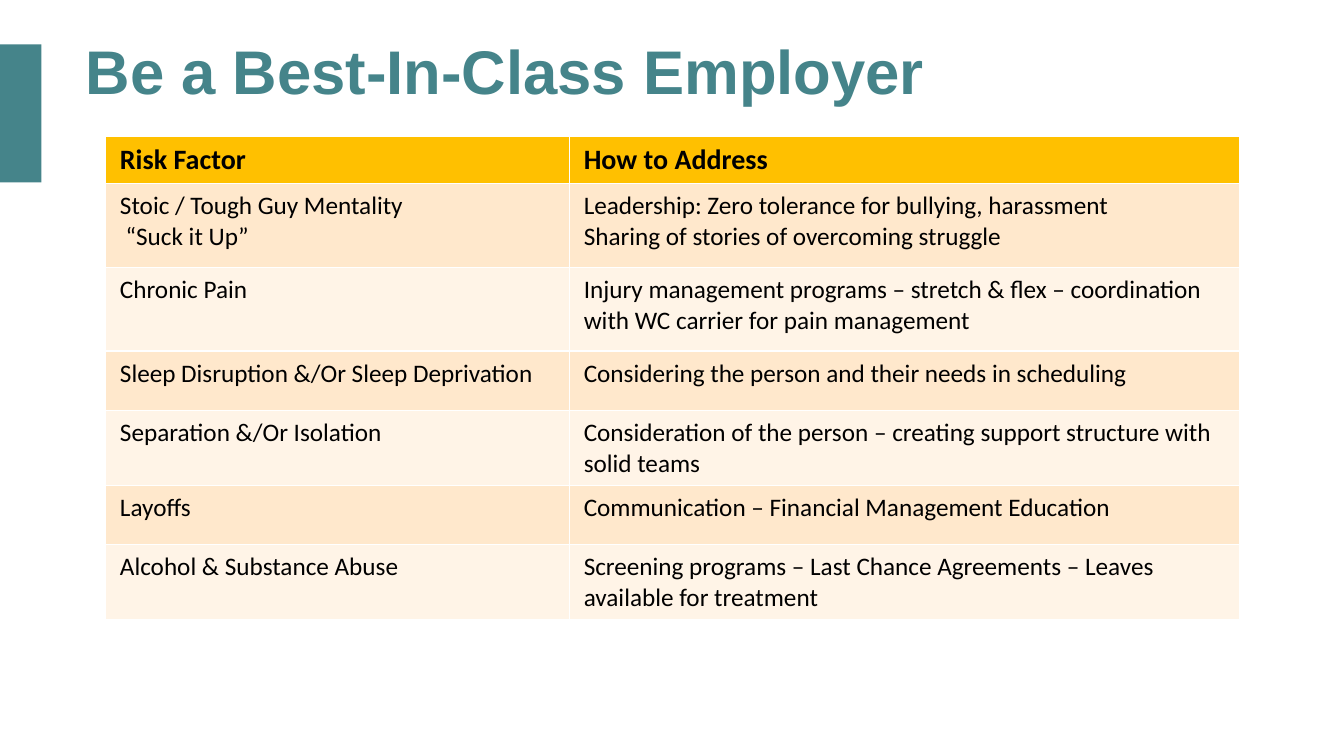
import pptx
import pptx.util
import pptx.dml.color
import pptx.enum.shapes
import pptx.enum.text

RGB = pptx.dml.color.RGBColor
Inches = pptx.util.Inches
Pt = pptx.util.Pt

TEAL = RGB(0x45, 0x84, 0x8A)
GOLD = RGB(0xFF, 0xC0, 0x00)
PEACH = RGB(0xFF, 0xE8, 0xCC)
CREAM = RGB(0xFF, 0xF4, 0xE7)
BLACK = RGB(0, 0, 0)

TITLE = {"name": "Arial", "size": Pt(44), "bold": True}
HEAD = {"name": "Calibri", "size": Pt(20), "bold": True}
BODY = {"name": "Calibri", "size": Pt(18), "bold": False}
INSET = {"margin_left": Inches(0.14), "margin_top": Inches(0.07),
         "margin_right": Inches(0.07), "margin_bottom": Inches(0.07)}

COLS = [4.6, 6.64]
# Each row: height, risk factor, how to address
ROWS = [
    (0.47, "Risk Factor", "How to Address"),
    (0.83, "Stoic / Tough Guy Mentality\n “Suck it Up”",
     "Leadership: Zero tolerance for bullying, harassment\n"
     "Sharing of stories of overcoming struggle"),
    (0.83, "Chronic Pain",
     "Injury management programs – stretch & flex – "
     "coordination with WC carrier for pain management"),
    (0.59, "Sleep Disruption &/Or Sleep Deprivation",
     "Considering the person and their needs in scheduling"),
    (0.74, "Separation &/Or Isolation",
     "Consideration of the person – creating support structure "
     "with solid teams"),
    (0.59, "Layoffs", "Communication – Financial Management Education"),
    (0.74, "Alcohol & Substance Abuse",
     "Screening programs – Last Chance Agreements – "
     "Leaves available for treatment"),
]


def style(frame, form, color):
    for para in frame.paragraphs:
        for run in para.runs:
            for key, val in form.items():
                setattr(run.font, key, val)
            run.font.color.rgb = color


deck = pptx.Presentation()
deck.slide_width = Inches(13.33)
deck.slide_height = Inches(7.5)
slide = deck.slides.add_slide(deck.slide_layouts[6])

# Side bar
bar = slide.shapes.add_shape(
    pptx.enum.shapes.MSO_SHAPE.RECTANGLE,
    0, Inches(0.44), Inches(0.41), Inches(1.37))
bar.shadow.inherit = False
bar.fill.solid()
bar.fill.fore_color.rgb = TEAL
bar.line.fill.background()

# Title
box = slide.shapes.add_textbox(
    Inches(0.75), Inches(0.15), Inches(10.81), Inches(1.17))
frame = box.text_frame
frame.word_wrap = True
frame.vertical_anchor = pptx.enum.text.MSO_ANCHOR.MIDDLE
frame.text = "Be a Best-In-Class Employer"
frame.paragraphs[0].line_spacing = 0.9
style(frame, TITLE, TEAL)

# Table: the default style draws the white cell borders
table = slide.shapes.add_table(
    len(ROWS), len(COLS), Inches(1.05), Inches(1.35),
    Inches(sum(COLS)), Inches(sum(row[0] for row in ROWS))).table
for col, width in zip(table.columns, COLS):
    col.width = Inches(width)

for r, (height, *texts) in enumerate(ROWS):
    table.rows[r].height = Inches(height)
    if r == 0:
        form, shade = HEAD, GOLD
    else:
        form, shade = BODY, PEACH if r % 2 else CREAM
    for c, text in enumerate(texts):
        cell = table.cell(r, c)
        for key, val in INSET.items():
            setattr(cell, key, val)
        cell.fill.solid()
        cell.fill.fore_color.rgb = shade
        cell.text_frame.text = text
        style(cell.text_frame, form, BLACK)

deck.save("out.pptx")
